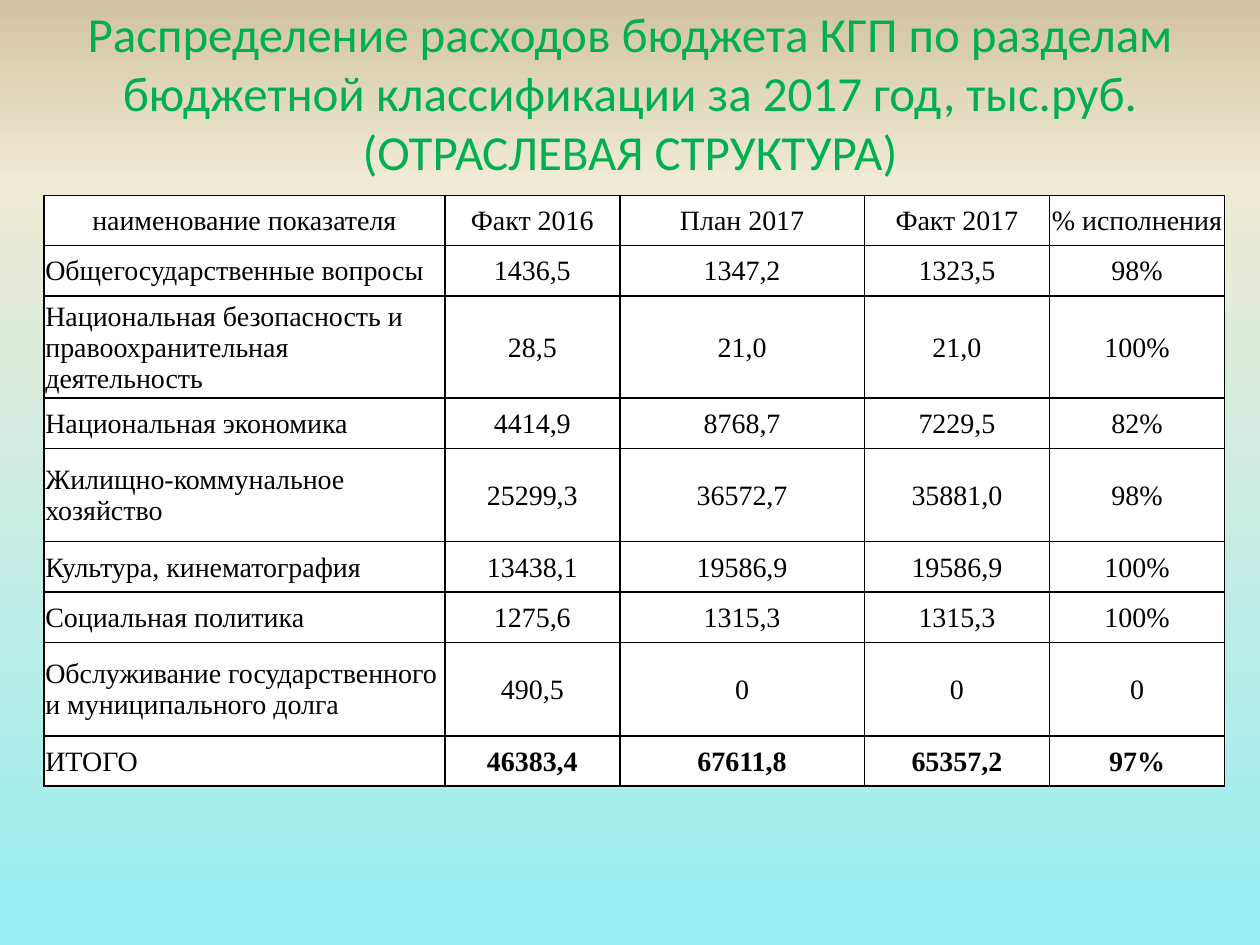
"""Build a budget expenditure slide with a table of sections."""
from copy import deepcopy
from typing import NamedTuple

from lxml.etree import SubElement
from pptx import Presentation
from pptx.dml.color import RGBColor
from pptx.enum.text import MSO_ANCHOR as Anchor, PP_ALIGN as Align
from pptx.oxml.ns import qn
from pptx.util import Emu, Inches, Pt

AQUA = RGBColor(0x97, 0xEF, 0xF3)
CREAM = RGBColor(0xF0, 0xEB, 0xD5)
SAND = RGBColor(0xD1, 0xC3, 0x9F)
GREEN = RGBColor(0x00, 0xB0, 0x50)
BLACK = RGBColor(0x00, 0x00, 0x00)
WHITE = RGBColor(0xFF, 0xFF, 0xFF)

BACKGROUND = ((0, AQUA), (0.81, CREAM), (1, SAND))
TITLE = (
    "Распределение расходов бюджета КГП по разделам "
    "бюджетной классификации за 2017 год, тыс.руб.",
    "(ОТРАСЛЕВАЯ СТРУКТУРА)",
)
COL_WIDTHS = (3.18, 1.39, 1.94, 1.47, 1.39)
ROW_HEIGHT, TALL_HEIGHT = 0.4, 0.74


class Row(NamedTuple):
    """One table row: its texts and its style."""
    name: str
    values: tuple[str, ...]
    height: float = ROW_HEIGHT
    name_align: Align = Align.LEFT
    bold: bool = False


ROWS = (
    Row("наименование показателя", ("Факт 2016", "План 2017", "Факт 2017", "% исполнения"),
        name_align=Align.CENTER),
    Row("Общегосударственные вопросы", ("1436,5", "1347,2", "1323,5", "98%")),
    Row("Национальная безопасность и правоохранительная деятельность",
        ("28,5", "21,0", "21,0", "100%"), TALL_HEIGHT),
    Row("Национальная экономика", ("4414,9", "8768,7", "7229,5", "82%")),
    Row("Жилищно-коммунальное хозяйство", ("25299,3", "36572,7", "35881,0", "98%"), TALL_HEIGHT),
    Row("Культура, кинематография", ("13438,1", "19586,9", "19586,9", "100%")),
    Row("Социальная политика", ("1275,6", "1315,3", "1315,3", "100%")),
    Row("Обслуживание государственного и муниципального долга",
        ("490,5", "0", "0", "0"), TALL_HEIGHT),
    Row("ИТОГО", ("46383,4", "67611,8", "65357,2", "97%"), bold=True),
)


def add_run(p, text: str, font: str, size: int, color: RGBColor, bold: bool = False) -> None:
    """Add one styled run to a paragraph."""
    r = p.add_run()
    r.text = text
    r.font.name, r.font.size, r.font.bold = font, Pt(size), bold
    r.font.color.rgb = color


def paint_background(s) -> None:
    """Fill the slide with an upward gradient."""
    fill = s.background.fill
    fill.gradient()
    fill.gradient_angle = 90
    stops = s.element.find(".//" + qn("a:gsLst"))
    stops.append(deepcopy(stops[-1]))
    for stop, (position, color) in zip(fill.gradient_stops, BACKGROUND):
        stop.position = position
        stop.color.rgb = color


def add_title(s, width: int, height: int) -> None:
    """Add the centred title across the top of the slide."""
    sp = s.shapes.add_textbox(
        Emu(int(width * 0.02)), Emu(int(height * 0.04)),
        Emu(int(width * 0.96)), Emu(int(height * 0.115)))
    tf = sp.text_frame
    tf.word_wrap = True
    tf.vertical_anchor = Anchor.MIDDLE
    p = tf.paragraphs[0]
    p.alignment = Align.CENTER
    for i, line in enumerate(TITLE):
        if i:
            p.add_line_break()
        add_run(p, line, "Calibri", 28, GREEN)


def add_borders(cell) -> None:
    """Draw a thin black line on each side of a cell."""
    props = cell._tc.get_or_add_tcPr()
    for i, side in enumerate(("a:lnL", "a:lnR", "a:lnT", "a:lnB")):
        line = props.makeelement(qn(side), {"w": str(Pt(1))})
        color = SubElement(SubElement(line, qn("a:solidFill")), qn("a:srgbClr"))
        color.set("val", str(BLACK))
        props.insert(i, line)


def fill_cell(cell, text: str, align: Align, bold: bool) -> None:
    """Write and style one table cell."""
    cell.margin_left = cell.margin_right = cell.margin_top = Inches(0.01)
    cell.margin_bottom = 0
    cell.vertical_anchor = Anchor.MIDDLE
    cell.fill.solid()
    cell.fill.fore_color.rgb = WHITE
    add_borders(cell)
    p = cell.text_frame.paragraphs[0]
    p.alignment = align
    add_run(p, text, "Times New Roman", 16, BLACK, bold)


def add_budget_table(s) -> None:
    """Add the table of expenditure by section."""
    table = s.shapes.add_table(
        len(ROWS), len(COL_WIDTHS), Inches(0.35), Inches(1.55),
        Inches(sum(COL_WIDTHS)), Inches(sum(row.height for row in ROWS))).table
    table.first_row = table.horz_banding = False
    for column, width in zip(table.columns, COL_WIDTHS):
        column.width = Inches(width)
    for i, row in enumerate(ROWS):
        table.rows[i].height = Inches(row.height)
        fill_cell(table.cell(i, 0), row.name, row.name_align, False)
        for j, value in enumerate(row.values, start=1):
            fill_cell(table.cell(i, j), value, Align.CENTER, row.bold)


def main() -> None:
    """Build and save the slide."""
    prs = Presentation()
    prs.slide_width, prs.slide_height = Inches(10), Inches(7.5)
    s = prs.slides.add_slide(prs.slide_layouts[6])
    paint_background(s)
    add_title(s, prs.slide_width, prs.slide_height)
    add_budget_table(s)
    prs.save("out.pptx")


if __name__ == "__main__":
    main()
